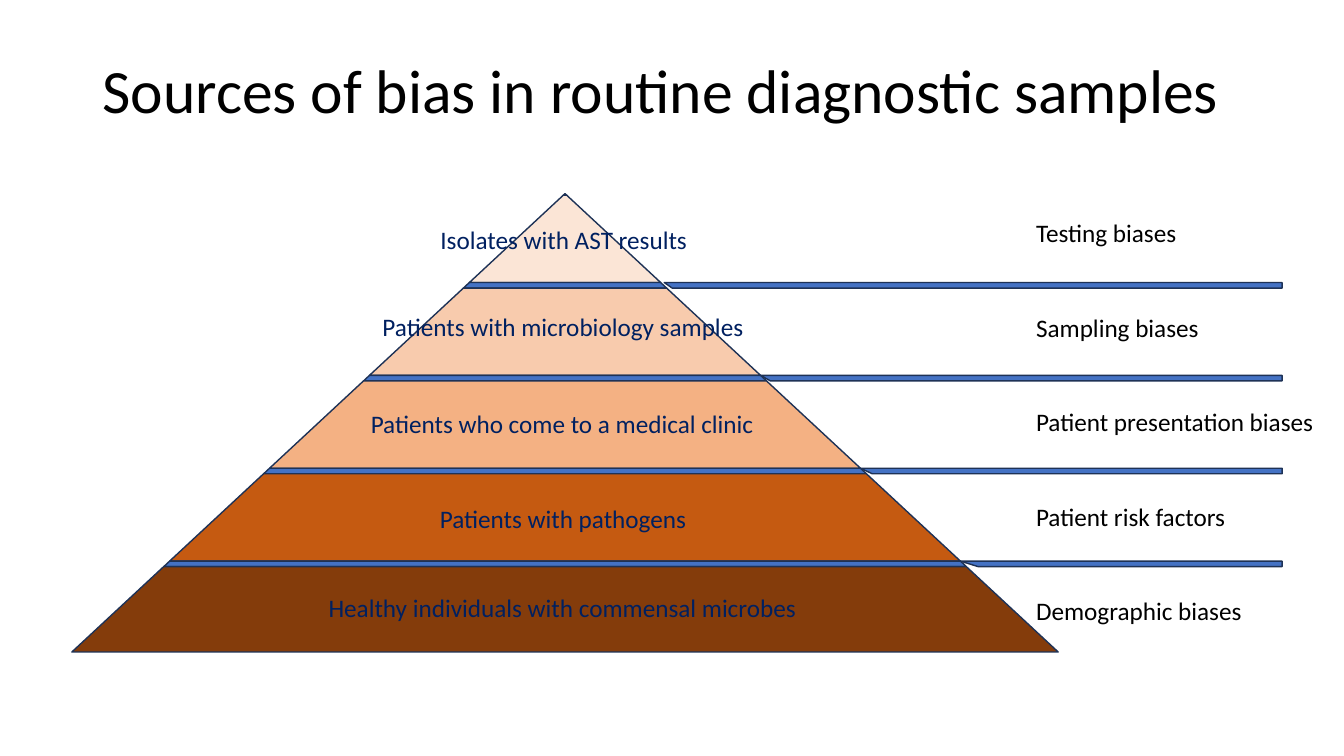
import dataclasses
import typing

import pptx
import pptx.dml.color
import pptx.enum.text
import pptx.util

Cm = pptx.util.Cm
Pt = pptx.util.Pt
Point = tuple[float, float]

MID = 14.24
TOP = 4.88
TIP = 4.92
BASE = 16.43
SLOPE = 1.076
BAR_TOP = 7.12
BAR_STEP = 2.34
BAR_H = 0.14
RAIL_END = 32.31
BIAS_X = 25.86
BIAS_TOP = 5.36
BIAS_STEP = 2.38
TEXT_H = 1.02
BLUE = "4472C4"
EDGE = "1E3256"
NAVY = "002060"
BLACK = "000000"


@dataclasses.dataclass
class Tier:
    group: str
    width: float
    top: float
    fill: str
    bias: str
    span: float
    gap: float = 0
    notch: float = 0


TIERS = [
    Tier("Isolates with AST results", 6.78, 5.54, "FBE5D6",
         "Testing biases", 4.09, 0.09, 0.2),
    Tier("Patients with microbiology samples", 9.7, 7.72, "F8CBAD",
         "Sampling biases", 4.65, 0, 0.25),
    Tier("Patients who come to a medical clinic", 10.29, 10.16, "F4B183",
         "Patient presentation biases", 7.59, 0, 0.3),
    Tier("Patients with pathogens", 6.81, 12.55, "C55A11",
         "Patient risk factors", 5.33, 0, 0.45),
    Tier("Healthy individuals with commensal microbes", 12.42, 14.81, "843C0B",
         "Demographic biases", 5.77),
]


def color(code: str) -> pptx.dml.color.RGBColor:
    return pptx.dml.color.RGBColor.from_string(code)


def assign(item: typing.Any, form: dict[str, typing.Any]) -> None:
    for name, value in form.items():
        setattr(item, name, value)


def style(para: typing.Any, size: float, code: str) -> None:
    assign(para, {"alignment": pptx.enum.text.PP_ALIGN.LEFT})
    assign(para.runs[0].font, {"name": "Calibri", "size": Pt(size)})
    para.runs[0].font.color.rgb = color(code)


def outline(slide: typing.Any, points: list[Point], code: str) -> None:
    ends = [(Cm(x), Cm(y)) for x, y in points]
    pen = slide.shapes.build_freeform(*ends[0])
    pen.add_line_segments(ends[1:], close=True)
    shape = pen.convert_to_shape()
    shape.shadow.inherit = False
    shape.fill.solid()
    shape.fill.fore_color.rgb = color(code)
    shape.line.color.rgb = color(EDGE)
    shape.line.width = Pt(1)


def slab(slide: typing.Any, high: float, low: float, code: str) -> None:
    upper, lower = SLOPE * (high - TOP), SLOPE * (low - TOP)
    outline(slide, [(MID - upper, high), (MID + upper, high),
                    (MID + lower, low), (MID - lower, low)], code)


def rail(slide: typing.Any, tier: Tier, high: float) -> None:
    left = MID + SLOPE * (high - TOP) + tier.gap
    low = high + BAR_H
    outline(slide, [(left, high), (RAIL_END, high), (RAIL_END, low),
                    (left + tier.notch, low)], BLUE)


def label(slide: typing.Any, text: str, left: float, top: float,
          width: float, code: str) -> None:
    box = slide.shapes.add_textbox(Cm(left), Cm(top), Cm(width), Cm(TEXT_H))
    frame = box.text_frame
    assign(frame, {
        "text": text,
        "word_wrap": False,
        "auto_size": pptx.enum.text.MSO_AUTO_SIZE.SHAPE_TO_FIT_TEXT,
    })
    style(frame.paragraphs[0], 18, code)


def head(slide: typing.Any) -> None:
    title = slide.shapes.title
    assign(title, {"left": Cm(2.33), "top": Cm(0.51),
                   "width": Cm(29.21), "height": Cm(3.68)})
    assign(title.text_frame, {
        "text": "Sources of bias in routine diagnostic samples",
        "vertical_anchor": pptx.enum.text.MSO_ANCHOR.MIDDLE,
    })
    para = title.text_frame.paragraphs[0]
    para.line_spacing = 0.9
    style(para, 44, BLACK)


def main() -> None:
    deck = pptx.Presentation()
    assign(deck, {"slide_width": Cm(33.87), "slide_height": Cm(19.05)})
    slide = deck.slides.add_slide(deck.slide_layouts[5])
    head(slide)
    slab(slide, TOP, TIP, BLUE)
    high = TIP
    for row, tier in enumerate(TIERS):
        last = row == len(TIERS) - 1
        low = BASE if last else BAR_TOP + row * BAR_STEP
        slab(slide, high, low, tier.fill)
        if not last:
            slab(slide, low, low + BAR_H, BLUE)
            rail(slide, tier, low)
        high = low + BAR_H
    for row, tier in enumerate(TIERS):
        label(slide, tier.group, MID - tier.width / 2, tier.top,
              tier.width, NAVY)
        label(slide, tier.bias, BIAS_X, BIAS_TOP + row * BIAS_STEP,
              tier.span, BLACK)
    deck.save("out.pptx")


if __name__ == "__main__":
    main()
